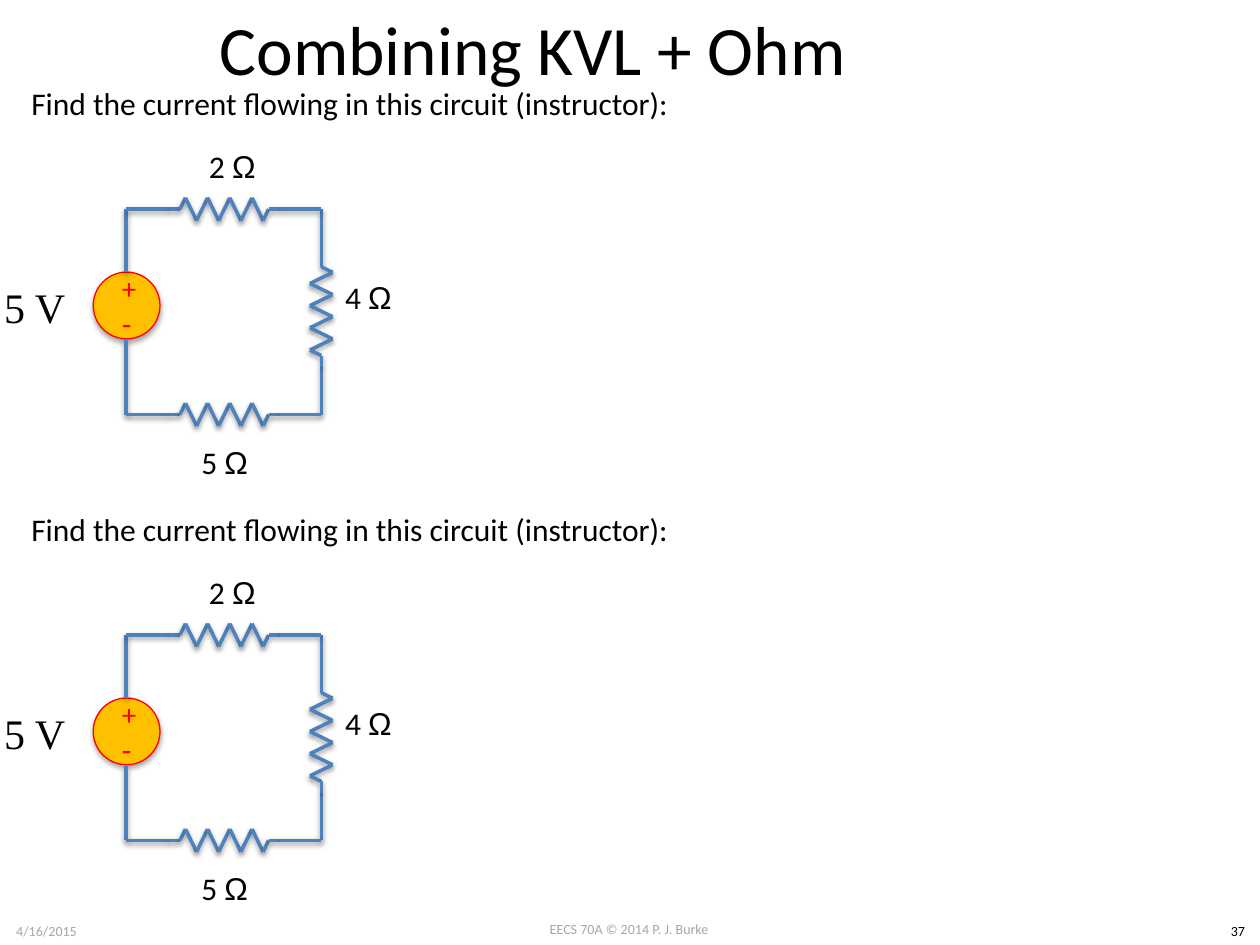
"""Build a slide with two identical series circuits for a KVL and Ohm exercise."""
import pptx
import pptx.dml.color
import pptx.enum.shapes
import pptx.enum.text
import pptx.oxml
import pptx.oxml.ns
import pptx.util

Inches, Pt = pptx.util.Inches, pptx.util.Pt
RGB = pptx.dml.color.RGBColor.from_string
ALIGN = pptx.enum.text.PP_ALIGN
ANCHOR = pptx.enum.text.MSO_ANCHOR
AUTO = pptx.enum.text.MSO_AUTO_SIZE

COLORS = {"text": "000000", "footer": "A6A6A6", "wire": "4F81BD",
          "source": "FFC000", "polarity": "FF0000"}


def add_text(shapes, box, text, size, color="text", font="Calibri",
             centered=True, middle=False, wrap=True):
    tf = shapes.add_textbox(*[Inches(v) for v in box]).text_frame
    tf.word_wrap = wrap
    tf.auto_size = AUTO.NONE if middle else AUTO.SHAPE_TO_FIT_TEXT
    tf.vertical_anchor = ANCHOR.MIDDLE if middle else ANCHOR.TOP
    p = tf.paragraphs[0]
    p.text = text
    p.alignment = ALIGN.CENTER if centered else ALIGN.LEFT
    r = p.runs[0]
    r.font.size = Pt(size)
    r.font.name = font
    r.font.color.rgb = RGB(COLORS[color])
    return p


def add_shadow(sp, alpha, dist):
    spPr = sp.element.spPr
    for old in spPr.findall(pptx.oxml.ns.qn("a:effectLst")):
        spPr.remove(old)
    spPr.append(pptx.oxml.parse_xml(
        f'<a:effectLst {pptx.oxml.ns.nsdecls("a")}>'
        f'<a:outerShdw blurRad="{Pt(3.1)}" dist="{Pt(dist)}" dir="5400000" rotWithShape="0">'
        f'<a:srgbClr val="000000"><a:alpha val="{alpha * 1000}"/></a:srgbClr>'
        '</a:outerShdw></a:effectLst>'))


prs = pptx.Presentation()
prs.slide_width, prs.slide_height = Inches(10), Inches(7.5)
s = prs.slides.add_slide(prs.slide_layouts[6])

add_text(s.shapes, (3.83, 7.26, 2.33, 0.24), "EECS 70A © 2014 P. J. Burke", 8, "footer")
add_text(s.shapes, (0, 7.27, 0.74, 0.24), "4/16/2015", 8, "footer")
add_text(s.shapes, (9.65, 7.27, 0.35, 0.24), "37", 8)
add_text(s.shapes, (0.83, 0, 6.8, 0.75), "Combining KVL + Ohm", 39.6, middle=True)

LEFT, RIGHT, TOP, BOTTOM = 1, 2.55, 1.66, 3.29
RES_X, RES_Y, RES_LEN = 1.34, 2.03, 0.88
AMP, STEP = 0.09, 0.088
zigzag = [(0, 0), (STEP, 0)]
zigzag += [(STEP * (i + 1.5), AMP if i % 2 else -AMP) for i in range(8)]
zigzag += [(STEP * 9, 0), (RES_LEN, 0)]

paths = [
    [(LEFT, BOTTOM), (LEFT, 2.7)],
    [(LEFT, 2.16), (LEFT, TOP)],
    [(RIGHT, TOP), (RIGHT, RES_Y)],
    [(RIGHT, RES_Y + RES_LEN), (RIGHT, BOTTOM)],
    [(RIGHT - across, RES_Y + along) for along, across in zigzag],
]
for y in (TOP, BOTTOM):
    paths.append([(LEFT, y), (RES_X, y)])
    paths.append([(RES_X + along, y + across) for along, across in zigzag])
    paths.append([(RES_X + RES_LEN, y), (RIGHT, y)])

for dy in (0, 3.38):
    shapes = s.shapes.add_group_shape().shapes
    add_text(shapes, (0.15, 0.62 + dy, 5.32, 0.4),
             "Find the current flowing in this circuit (instructor):", 18,
             centered=False, wrap=False)
    add_text(shapes, (-0.32, 2.07 + dy, 1.19, 0.73), "5 V", 24,
             font="Times New Roman", middle=True)

    sp = shapes.add_shape(pptx.enum.shapes.MSO_SHAPE.OVAL, Inches(0.74),
                          Inches(2.16 + dy), Inches(0.53), Inches(0.53))
    sp.fill.solid()
    sp.fill.fore_color.rgb = RGB(COLORS["source"])
    sp.line.color.rgb = RGB(COLORS["polarity"])
    sp.line.width = Pt(0.75)
    add_shadow(sp, 35, 1.8)
    for sign, y, size in (("+", 2.12, 16.6), ("-", 2.4, 18)):
        add_text(shapes, (0.87, y + dy, 0.26, 0.33), sign, size, "polarity", middle=True)

    for path in paths:
        for (x1, y1), (x2, y2) in zip(path, path[1:]):
            line = shapes.add_connector(
                pptx.enum.shapes.MSO_CONNECTOR.STRAIGHT,
                Inches(x1), Inches(y1 + dy), Inches(x2), Inches(y2 + dy))
            line.line.color.rgb = RGB(COLORS["wire"])
            line.line.width = Pt(2)
            add_shadow(line, 38, 1.6)

    for value, x, y in (("2 ", 1.56, 1.12), ("4 ", 2.64, 2.16), ("5 ", 1.5, 3.47)):
        p = add_text(shapes, (x, y + dy, 0.58, 0.4), value, 18, centered=False, wrap=False)
        r = p.add_run()
        r.text = "Ω"
        r.font.size = Pt(18)
        r.font.name = "Arial"
        r.font.color.rgb = RGB(COLORS["text"])

prs.save("out.pptx")
